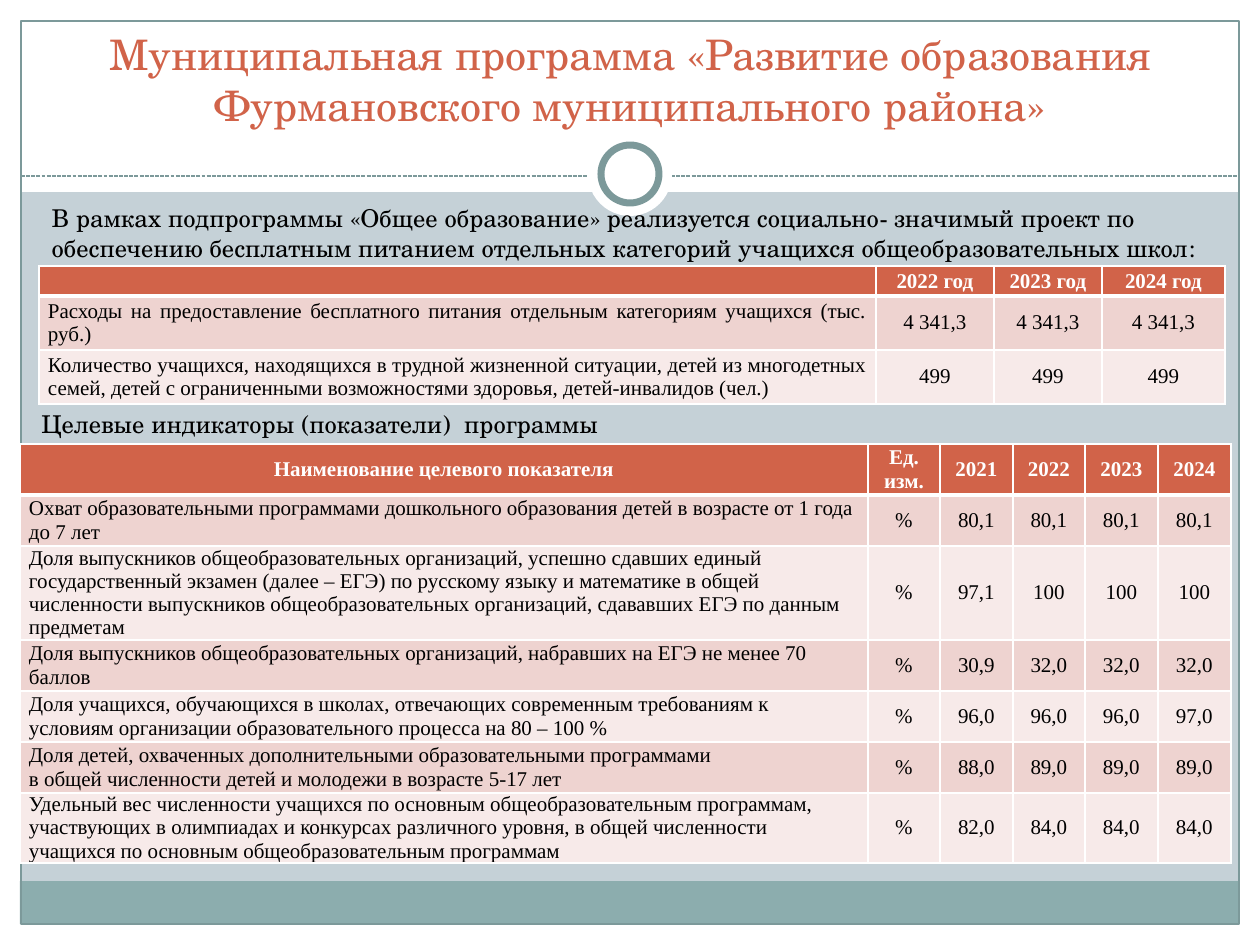
from lxml.etree import SubElement
from pptx import Presentation
from pptx.dml.color import RGBColor
from pptx.enum.dml import MSO_LINE
from pptx.enum.shapes import MSO_CONNECTOR, MSO_SHAPE
from pptx.enum.text import MSO_ANCHOR, MSO_AUTO_SIZE, PP_ALIGN
from pptx.oxml.ns import qn
from pptx.util import Emu, Pt

COLORS = {
    "background": "C5D1D7", "white": "FFFFFF", "black": "000000", "accent": "D16349",
    "frame": "7C999A", "footer": "8CADAE", "band_dark": "EED3D0", "band_light": "F7EAE9",
}
SLIDE_SIZE = (1260, 945)
HEADING_FONT, TABLE_FONT = "TeX Gyre Schola", "Times New Roman"

TITLE = "Муниципальная программа «Развитие образования Фурмановского муниципального района»"
INTRO = ("В рамках подпрограммы «Общее образование» реализуется социально- значимый проект по "
         "обеспечению бесплатным питанием отдельных категорий учащихся общеобразовательных школ:")
CAPTION = "Целевые индикаторы (показатели)  программы"

MEALS = {
    "origin": (39, 266),
    "columns": [837, 118, 108, 123],
    "heights": [30, 54, 54],
    "label_align": PP_ALIGN.JUSTIFY,
    "rows": [
        ["", "2022 год", "2023 год", "2024 год"],
        ["Расходы на предоставление бесплатного питания отдельным категориям учащихся (тыс. руб.)",
         "4 341,3", "4 341,3", "4 341,3"],
        ["Количество учащихся, находящихся в трудной жизненной ситуации, детей из многодетных "
         "семей, детей с ограниченными возможностями здоровья, детей-инвалидов (чел.)",
         "499", "499", "499"],
    ],
}
INDICATORS = {
    "origin": (20, 444),
    "columns": [848, 72, 73, 72, 73, 73],
    "heights": [51, 51, 94, 51, 51, 51, 70],
    "label_align": PP_ALIGN.LEFT,
    "rows": [
        ["Наименование целевого показателя", "Ед. изм.", "2021", "2022", "2023", "2024"],
        ["Охват образовательными программами дошкольного образования детей в возрасте от 1 года "
         "до 7 лет", "%", "80,1", "80,1", "80,1", "80,1"],
        ["Доля выпускников общеобразовательных организаций, успешно сдавших единый "
         "государственный экзамен (далее – ЕГЭ) по русскому языку и математике в общей "
         "численности выпускников общеобразовательных организаций, сдававших ЕГЭ по данным "
         "предметам", "%", "97,1", "100", "100", "100"],
        ["Доля выпускников общеобразовательных организаций, набравших на ЕГЭ не менее 70 баллов",
         "%", "30,9", "32,0", "32,0", "32,0"],
        ["Доля учащихся, обучающихся в школах, отвечающих современным требованиям к "
         "условиям организации образовательного процесса на 80 – 100 %",
         "%", "96,0", "96,0", "96,0", "97,0"],
        ["Доля детей, охваченных дополнительными образовательными программами\n"
         "в общей численности детей и молодежи в возрасте 5-17 лет",
         "%", "88,0", "89,0", "89,0", "89,0"],
        ["Удельный вес численности учащихся по основным общеобразовательным программам, "
         "участвующих в олимпиадах и конкурсах различного уровня, в общей численности "
         "учащихся по основным общеобразовательным программам",
         "%", "82,0", "84,0", "84,0", "84,0"],
    ],
}

# Shape, box, fill, line colour, line width in points
FRAME_SHAPES = [
    (MSO_SHAPE.RECTANGLE, (0, 924, 1260, 21), "white", None, 0),
    (MSO_SHAPE.RECTANGLE, (0, 0, 1260, 192), "white", None, 0),
    (MSO_SHAPE.RECTANGLE, (0, 0, 21, 945), "white", None, 0),
    (MSO_SHAPE.RECTANGLE, (1239, 0, 21, 945), "white", None, 0),
    (MSO_SHAPE.RECTANGLE, (20, 881, 1218, 43), "footer", None, 0),
    (MSO_SHAPE.RECTANGLE, (21, 21, 1218, 903), None, "frame", 0.75),
]
RING_SHAPES = [
    (MSO_SHAPE.OVAL, (588, 132, 84, 84), "white", None, 0),
    (MSO_SHAPE.OVAL, (601, 145, 58, 58), "white", "frame", 4),
]
DIVIDER = (21, 176, 1239, 176)


def px(length):
    return Emu(round(length * 914400 / 126))


def box(lengths):
    return [px(length) for length in lengths]


def color(name):
    return RGBColor.from_string(COLORS[name])


def set_attributes(target, values):
    for name, value in values.items():
        setattr(target, name, value)


def paint(fill, name):
    if name:
        fill.solid()
        fill.fore_color.rgb = color(name)
    else:
        fill.background()


def add_shapes(slide, shapes):
    for kind, place, fill, line, width in shapes:
        shape = slide.shapes.add_shape(kind, *box(place))
        shape.shadow.inherit = False
        paint(shape.fill, fill)
        paint(shape.line.fill, line)
        if line:
            shape.line.width = Pt(width)


def add_divider(slide):
    line = slide.shapes.add_connector(MSO_CONNECTOR.STRAIGHT, *box(DIVIDER))
    paint(line.line.fill, "frame")
    set_attributes(line.line, {"width": Pt(0.75), "dash_style": MSO_LINE.SQUARE_DOT})
    SubElement(line.element.spPr, qn("a:effectLst"))


def format_paragraphs(frame, align, font, size, color_name, bold=False):
    for paragraph in frame.paragraphs:
        paragraph.alignment = align
        for run in paragraph.runs:
            set_attributes(run.font, {"name": font, "size": Pt(size), "bold": bold})
            run.font.color.rgb = color(color_name)


def write_text(shape, place, text, size, color_name, align=PP_ALIGN.LEFT, anchor=MSO_ANCHOR.TOP):
    set_attributes(shape, dict(zip(("left", "top", "width", "height"), box(place))))
    frame = shape.text_frame
    set_attributes(frame, {"text": text, "word_wrap": True,
                           "auto_size": MSO_AUTO_SIZE.NONE, "vertical_anchor": anchor})
    format_paragraphs(frame, align, HEADING_FONT, size, color_name)


def remove_bullet(paragraph):
    properties = paragraph._p.get_or_add_pPr()
    properties.set("marL", "0")
    properties.set("indent", "0")
    SubElement(properties, qn("a:buNone"))


def set_borders(cell, row_index):
    """Draw white cell edges, with a thicker one under the header row."""
    thick_side = {0: "lnB", 1: "lnT"}.get(row_index)
    properties = cell._tc.get_or_add_tcPr()
    for side in ("lnL", "lnR", "lnT", "lnB"):
        width = Pt(3 if side == thick_side else 1)
        edge = SubElement(properties, qn(f"a:{side}"), w=str(width))
        fill = SubElement(edge, qn("a:solidFill"))
        SubElement(fill, qn("a:srgbClr"), val=COLORS["white"])


def add_data_table(slide, data):
    size = (sum(data["columns"]), sum(data["heights"]))
    table = slide.shapes.add_table(len(data["rows"]), len(data["columns"]),
                                   *box(data["origin"] + size)).table
    for column, width in zip(table.columns, data["columns"]):
        column.width = px(width)
    for row, height in zip(table.rows, data["heights"]):
        row.height = px(height)
    for row_index, values in enumerate(data["rows"]):
        header = row_index == 0
        fill = "accent" if header else ("band_light", "band_dark")[row_index % 2]
        for column_index, text in enumerate(values):
            cell = table.cell(row_index, column_index)
            set_attributes(cell, {
                "text": text, "vertical_anchor": MSO_ANCHOR.MIDDLE,
                "margin_left": px(9), "margin_right": px(9), "margin_top": 0, "margin_bottom": 0})
            is_label = column_index == 0 and not header
            align = data["label_align"] if is_label else PP_ALIGN.CENTER
            format_paragraphs(cell.text_frame, align, TABLE_FONT, 12,
                              "white" if header else "black", header)
            if not text:
                SubElement(cell.text_frame.paragraphs[0]._p, qn("a:endParaRPr"), sz="1200")
            set_borders(cell, row_index)
            paint(cell.fill, fill)


def main():
    presentation = Presentation()
    presentation.slide_width, presentation.slide_height = box(SLIDE_SIZE)
    slide = presentation.slides.add_slide(presentation.slide_layouts[1])
    paint(slide.background.fill, "background")
    add_shapes(slide, FRAME_SHAPES)
    add_divider(slide)
    add_shapes(slide, RING_SHAPES)

    title, body = slide.shapes.title, slide.placeholders[1]
    write_text(title, (42, 31, 1176, 105), TITLE, 24, "accent",
               PP_ALIGN.CENTER, MSO_ANCHOR.BOTTOM)
    write_text(body, (39, 197, 1175, 98), INTRO, 14, "black")
    remove_bullet(body.text_frame.paragraphs[0])
    for placeholder in (title, body):  # bring in front of the frame
        slide.shapes.element.append(placeholder.element)

    add_data_table(slide, MEALS)
    add_data_table(slide, INDICATORS)
    caption_box = (29, 403, 1172, 84)
    write_text(slide.shapes.add_textbox(*box(caption_box)), caption_box, CAPTION, 14, "black")
    presentation.save("out.pptx")


if __name__ == "__main__":
    main()
